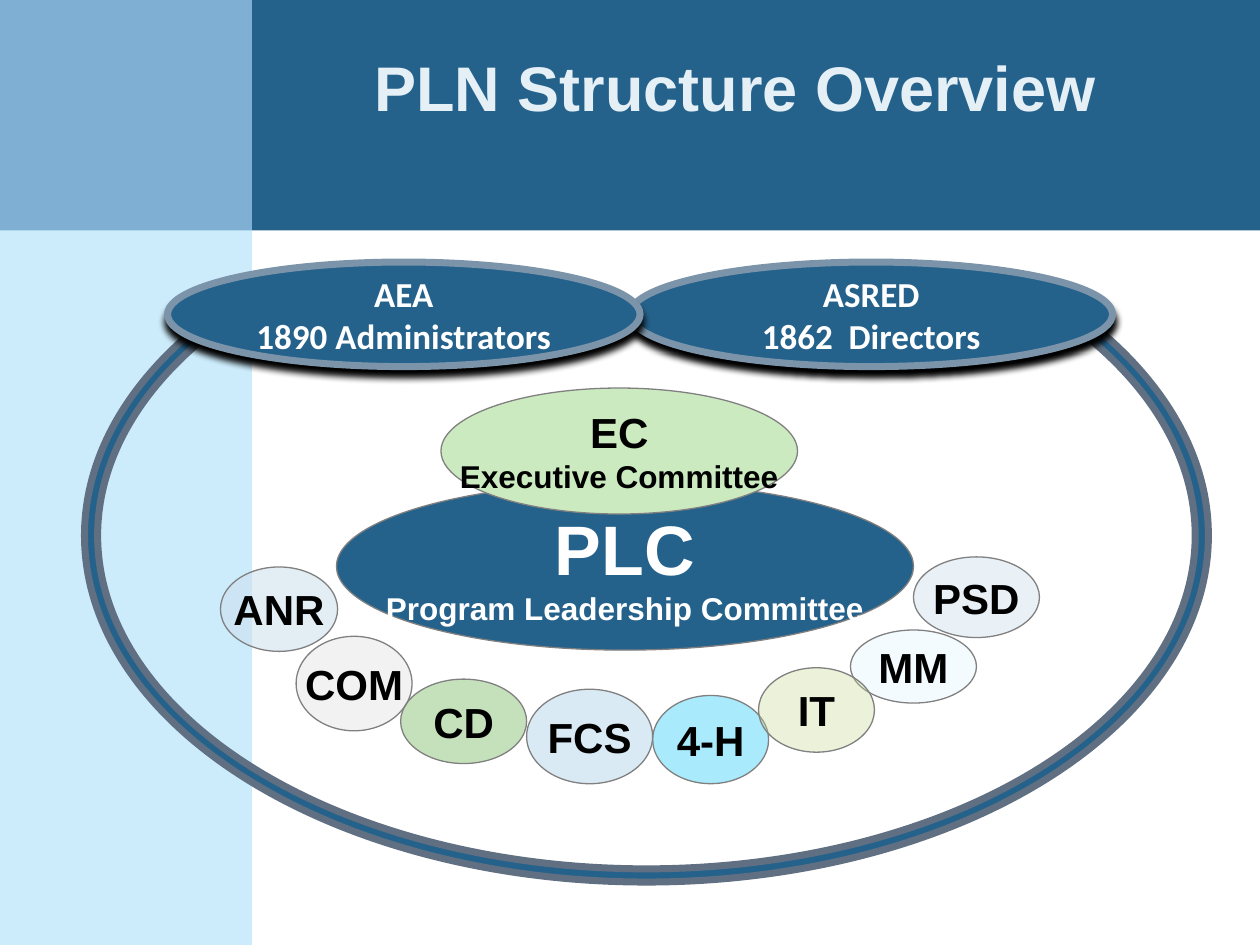
import pptx
import pptx.util
import pptx.dml.color
import pptx.enum.shapes
import pptx.enum.text
import pptx.oxml.ns
import lxml.etree

RGBColor = pptx.dml.color.RGBColor
Inches = pptx.util.Inches
Pt = pptx.util.Pt
SHAPE = pptx.enum.shapes.MSO_SHAPE
CENTER = pptx.enum.text.PP_ALIGN.CENTER
MIDDLE = pptx.enum.text.MSO_ANCHOR.MIDDLE
qn = pptx.oxml.ns.qn

NAVY = RGBColor(0x25, 0x62, 0x8B)
SKY = RGBColor(0xCC, 0xEC, 0xFC)
STEEL = RGBColor(0x7F, 0xAF, 0xD3)
RING_EDGE = RGBColor(0x60, 0x70, 0x82)
BOARD_EDGE = RGBColor(0x7C, 0x94, 0xA9)
GRAY = RGBColor(0x80, 0x80, 0x80)
MINT = RGBColor(0xCB, 0xEA, 0xC0)
PALE = RGBColor(0xE5, 0xEF, 0xF6)
WHITE = RGBColor(0xFF, 0xFF, 0xFF)
BLACK = RGBColor(0, 0, 0)

# Program committees: name, (left, top, width, height), colour, opacity in percent
COMMITTEES = [
    ("COM", (2.35, 5.05, 0.92, 0.75), RGBColor(0xD9, 0xD9, 0xD9), 34),
    ("ANR", (1.75, 4.5, 0.93, 0.67), RGBColor(0xCC, 0xDF, 0xED), 56),
    ("CD", (3.18, 5.39, 1, 0.67), RGBColor(0x55, 0xA8, 0x39), 34),
    ("FCS", (4.18, 5.47, 1, 0.75), RGBColor(0x95, 0xC4, 0xE3), 34),
    ("4-H", (5.18, 5.52, 0.92, 0.7), RGBColor(0x6B, 0xDB, 0xFA), 58),
    ("MM", (6.75, 5, 1, 0.58), RGBColor(0xE0, 0xF4, 0xFD), 34),
    ("PSD", (7.25, 4.42, 1, 0.64), PALE, 82),
    ("IT", (6.02, 5.3, 0.92, 0.67), RGBColor(0xC9, 0xDA, 0x92), 34),
]


def add_filled(slide, preset, box, fill, edge=None, edge_width=0.75):
    shape = slide.shapes.add_shape(preset, *map(Inches, box))
    shape.shadow.inherit = False
    shape.fill.solid()
    shape.fill.fore_color.rgb = fill
    if edge is None:
        shape.line.fill.background()
    else:
        shape.line.color.rgb = edge
        shape.line.width = Pt(edge_width)
    return shape


def format_line(paragraph, size, color, font):
    paragraph.alignment = CENTER
    for run in paragraph.runs:
        run.font.size = Pt(size)
        run.font.name = font
        run.font.bold = True
        run.font.color.rgb = color


def add_oval(slide, box, lines, fill, color, font="Arial", edge=GRAY, edge_width=0.75):
    """Draw an ellipse holding centred lines, each a (text, size) pair."""
    oval = add_filled(slide, SHAPE.OVAL, box, fill, edge, edge_width)
    frame = oval.text_frame
    frame.word_wrap = False
    frame.vertical_anchor = MIDDLE
    frame.text = "\n".join(text for text, _ in lines)
    for paragraph, (_, size) in zip(frame.paragraphs, lines):
        format_line(paragraph, size, color, font)
    return oval


def set_opacity(shape, percent):
    color = shape.fill._xPr.find(qn("a:solidFill"))[0]
    lxml.etree.SubElement(color, qn("a:alpha"), val=str(percent * 1000))


def add_drop_shadow(shape):
    effects = shape._element.spPr.find(qn("a:effectLst"))
    shadow = lxml.etree.SubElement(
        effects, qn("a:outerShdw"), blurRad=str(Pt(4)), dist=str(Pt(4)),
        dir="5400000", algn="ctr", rotWithShape="0")
    lxml.etree.SubElement(shadow, qn("a:srgbClr"), val=str(BLACK))


def add_board(slide, box, name, members):
    board = add_oval(slide, box, [(name, 20), (members, 20)], NAVY, WHITE,
                     "Calibri", BOARD_EDGE, 4)
    add_drop_shadow(board)


def add_ring(slide):
    ring = add_filled(slide, SHAPE.BLOCK_ARC, (0.67, 1.5, 8.92, 5.5), NAVY, RING_EDGE, 4)
    ring.rotation = 180
    for index, value in enumerate((93.735, 13.958, 0.019)):
        ring.adjustments[index] = value


def place_title(slide, text):
    title = slide.shapes.title
    title.left, title.top, title.width, title.height = map(Inches, (2.17, 0.33, 7.33, 0.71))
    title.text_frame.text = text
    title.text_frame.vertical_anchor = MIDDLE
    format_line(title.text_frame.paragraphs[0], 36, PALE, "Arial")
    # Bring the title in front of the bands
    slide.shapes._spTree.append(title._element)


def main():
    deck = pptx.Presentation()
    deck.slide_width, deck.slide_height = Inches(10), Inches(7.5)
    slide = deck.slides.add_slide(deck.slide_layouts[5])

    # Background bands
    add_filled(slide, SHAPE.RECTANGLE, (0.5, 0, 9.5, 1.83), NAVY)
    add_filled(slide, SHAPE.RECTANGLE, (0, 0, 2, 7.5), SKY)
    add_filled(slide, SHAPE.RECTANGLE, (0, 0, 2, 1.83), STEEL)

    # Ring and the two boards that close it
    add_ring(slide)
    add_board(slide, (5, 2.08, 3.83, 0.83), "ASRED", "1862  Directors")
    add_board(slide, (1.33, 2.08, 3.75, 0.83), "AEA", "1890 Administrators")

    # Leadership committee and title
    add_oval(slide, (2.67, 3.83, 4.58, 1.33),
             [("PLC", 40), ("Program Leadership Committee", 18)], NAVY, WHITE)
    place_title(slide, "PLN Structure Overview")

    # Program committees
    for name, box, fill, opacity in COMMITTEES:
        committee = add_oval(slide, box, [(name, 24)], fill, BLACK)
        set_opacity(committee, opacity)

    # Executive committee
    add_oval(slide, (3.5, 3.08, 2.83, 1),
             [("EC", 24), ("Executive Committee", 18)], MINT, BLACK)

    deck.save("out.pptx")


if __name__ == "__main__":
    main()
